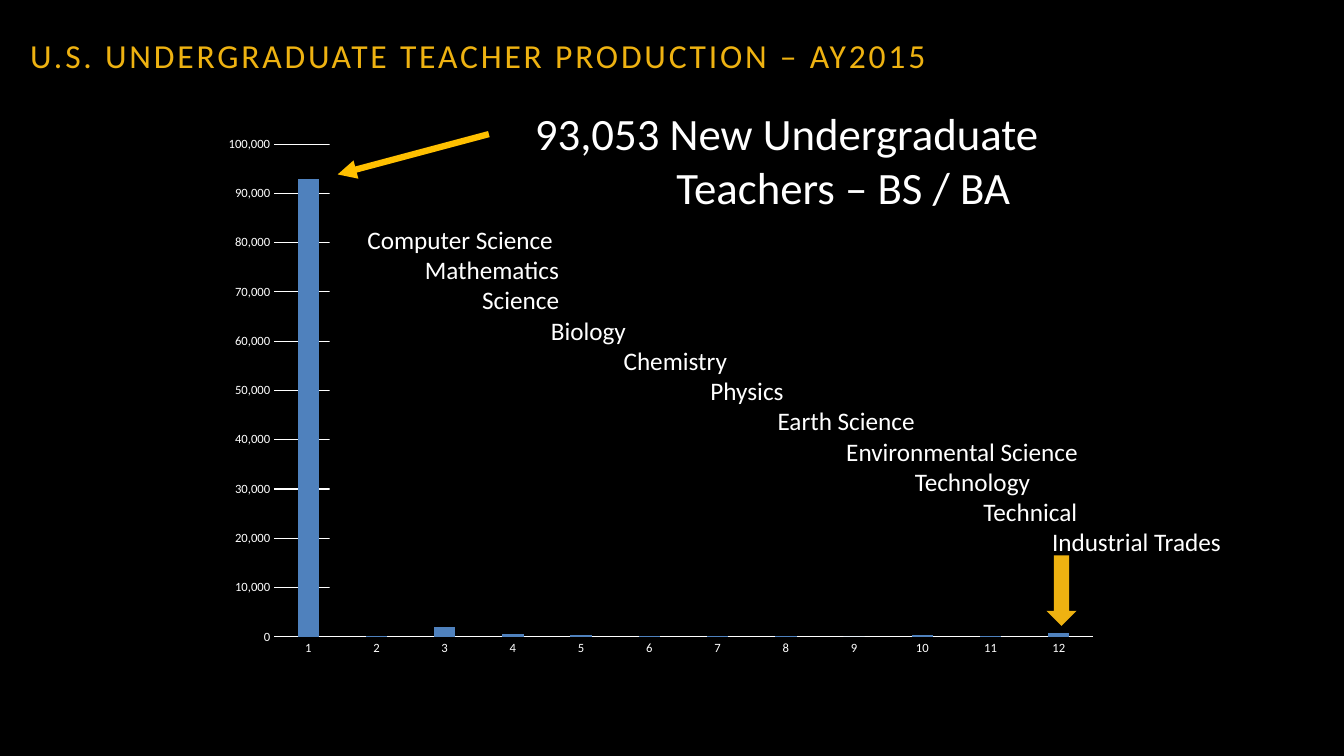
from lxml import etree
from pptx import Presentation
from pptx.chart.data import CategoryChartData
from pptx.dml.color import RGBColor
from pptx.enum.chart import XL_CHART_TYPE, XL_TICK_MARK
from pptx.enum.shapes import MSO_CONNECTOR, MSO_SHAPE
from pptx.enum.text import MSO_ANCHOR, PP_ALIGN
from pptx.oxml.ns import qn
from pptx.util import Pt

COLUMNS = XL_CHART_TYPE.COLUMN_CLUSTERED
NO_TICK = XL_TICK_MARK.NONE
STRAIGHT = MSO_CONNECTOR.STRAIGHT
RECTANGLE, RIGHT_ARROW = MSO_SHAPE.RECTANGLE, MSO_SHAPE.RIGHT_ARROW
TOP, MIDDLE = MSO_ANCHOR.TOP, MSO_ANCHOR.MIDDLE
LEFT = PP_ALIGN.LEFT

THEME = {
    "font": "Calibri",
    "black": RGBColor(0x00, 0x00, 0x00),
    "white": RGBColor(0xFF, 0xFF, 0xFF),
    "gold": RGBColor(0xEE, 0xB2, 0x11),
    "amber": RGBColor(0xFF, 0xC0, 0x00),
    "blue": RGBColor(0x4F, 0x81, 0xBD),
    "title_size": Pt(24),
    "callout_size": Pt(32),
    "subject_size": Pt(18),
    "axis_size": Pt(9),
}

presentation = Presentation()
presentation.slide_width = Pt(960)
presentation.slide_height = Pt(540)
slide = presentation.slides.add_slide(presentation.slide_layouts[6])
slide.background.fill.solid()
slide.background.fill.fore_color.rgb = THEME["black"]


def add_block(kind, left, top, width, height, color):
    shape = slide.shapes.add_shape(kind, Pt(left), Pt(top), Pt(width), Pt(height))
    shape.shadow.inherit = False
    shape.fill.solid()
    shape.fill.fore_color.rgb = color
    shape.line.fill.background()
    return shape


def write_lines(shape, lines, size, color):
    frame = shape.text_frame
    frame.word_wrap = True
    for index, (text, indent) in enumerate(lines):
        paragraph = frame.paragraphs[0] if index == 0 else frame.add_paragraph()
        paragraph.text = text
        paragraph.alignment = LEFT
        paragraph.font.name = THEME["font"]
        paragraph.font.size = size
        paragraph.font.color.rgb = color
        paragraph_properties = paragraph._p.get_or_add_pPr()
        paragraph_properties.set("marL", str(Pt(indent)))
        paragraph_properties.set("indent", "0")


title = add_block(RECTANGLE, 0, 0, 674, 78, THEME["black"])
title.text_frame.margin_left = Pt(21.6)
title.text_frame.vertical_anchor = MIDDLE
write_lines(title, [("U.S. UNDERGRADUATE TEACHER PRODUCTION – AY2015", 0)],
            THEME["title_size"], THEME["gold"])
title.text_frame.paragraphs[0].runs[0]._r.get_or_add_rPr().set("spc", "200")

chart_data = CategoryChartData(number_format="#,##0")
chart_data.categories = [str(number) for number in range(1, 13)]
chart_data.add_series("Series 1", [93000, 100, 2000, 600, 300, 100,
                                   100, 100, 0, 300, 100, 700])
chart = slide.shapes.add_chart(COLUMNS, Pt(150.5), Pt(90), Pt(643), Pt(386),
                               chart_data).chart
chart.has_legend = False
chart.has_title = False
chart.font.name = THEME["font"]
chart.font.size = THEME["axis_size"]
chart.font.color.rgb = THEME["white"]

plot = chart.plots[0]
plot.gap_width = 219
plot.overlap = -27
plot.vary_by_categories = False
series = plot.series[0]
series.format.fill.solid()
series.format.fill.fore_color.rgb = THEME["blue"]

category_axis, value_axis = chart.category_axis, chart.value_axis
for axis in (category_axis, value_axis):
    axis.major_tick_mark = NO_TICK
    axis.minor_tick_mark = NO_TICK
    axis.tick_labels.font.name = THEME["font"]
    axis.tick_labels.font.size = THEME["axis_size"]
    axis.tick_labels.font.color.rgb = THEME["white"]
value_axis.minimum_scale = 0
value_axis.maximum_scale = 100000
value_axis.major_unit = 10000
value_axis.tick_labels.number_format = "#,##0"
value_axis.tick_labels.number_format_is_linked = False
value_axis.format.line.fill.background()
for line in (category_axis.format.line, value_axis.major_gridlines.format.line):
    line.color.rgb = THEME["white"]
    line.width = Pt(0.75)

subjects = [
    ("Computer Science", 20), ("Mathematics", 61), ("Science", 102),
    ("Biology", 151), ("Chemistry", 203), ("Physics", 265),
    ("Earth Science", 313), ("Environmental Science", 362),
    ("Technology", 411), ("Technical", 460), ("Industrial Trades", 509),
]
subject_panel = add_block(RECTANGLE, 235.4, 90.7, 659.5, 334, THEME["black"])
subject_panel.text_frame.margin_top = Pt(69.5)
subject_panel.text_frame.vertical_anchor = TOP
write_lines(subject_panel, subjects, THEME["subject_size"], THEME["white"])

trades_arrow = add_block(RIGHT_ARROW, 733, 411.1, 50.4, 21.6, THEME["gold"])
trades_arrow.rotation = 90

total_arrow = slide.shapes.add_connector(STRAIGHT, Pt(349.2), Pt(95.8),
                                         Pt(241.2), Pt(124.6))
total_arrow.line.color.rgb = THEME["amber"]
total_arrow.line.width = Pt(4.5)
etree.SubElement(total_arrow.line._get_or_add_ln(), qn("a:tailEnd"), type="triangle")
etree.SubElement(total_arrow._element.spPr, qn("a:effectLst"))

callout = slide.shapes.add_textbox(Pt(375), Pt(72), Pt(385), Pt(85))
write_lines(callout, [("93,053 New Undergraduate", 0), ("Teachers – BS / BA", 101)],
            THEME["callout_size"], THEME["white"])

presentation.save("out.pptx")
